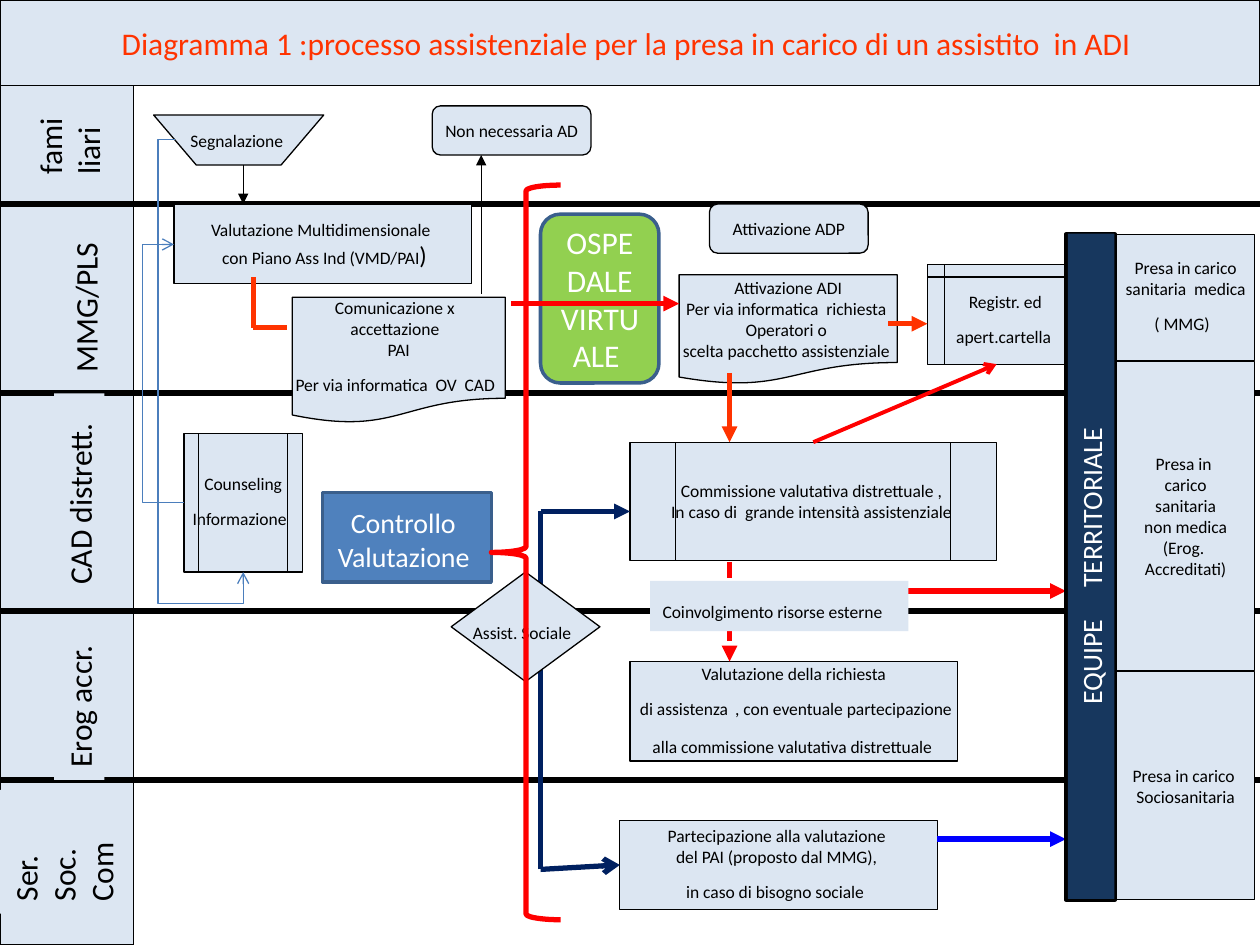
from pptx import Presentation
from pptx.dml.color import RGBColor
from pptx.enum.dml import MSO_LINE
from pptx.enum.shapes import MSO_CONNECTOR, MSO_SHAPE as SHAPE
from pptx.enum.text import MSO_ANCHOR, MSO_AUTO_SIZE, PP_ALIGN
from pptx.oxml.ns import qn
from pptx.util import Pt
from lxml.etree import SubElement

HUES = {
    "black": "000000", "white": "FFFFFF", "pale": "DCE6F2", "green": "92D050",
    "blue": "4F81BD", "edge": "3A5F8C", "thin": "4B7EBC", "navy": "002060",
    "dark": "17375E", "red": "FF0000", "flame": "FF3300", "vivid": "0000FF",
}
GAP = (" ", 18)  # tall space that opens up a line


class Chart:
    """Holds the style and the current slide."""
    font = "Calibri"

    def __init__(self, slide):
        self.slide = slide
        self.shapes = slide.shapes

    def hue(self, name):
        return RGBColor.from_string(HUES[name])

    def paint(self, item, fill="pale", edge="black", width=0.75):
        item.shadow.inherit = False
        if fill:
            item.fill.solid()
            item.fill.fore_color.rgb = self.hue(fill)
        else:
            item.fill.background()
        if edge:
            item.line.color.rgb = self.hue(edge)
            item.line.width = Pt(width)
        else:
            item.line.fill.background()

    def label(self, item, lines, size=10, color="black", wrap=False,
              align=PP_ALIGN.CENTER, grow=False):
        """Each line is a string or a list of strings and (string, size) pairs."""
        frame = item.text_frame
        frame.word_wrap = wrap
        frame.vertical_anchor = MSO_ANCHOR.TOP if grow else MSO_ANCHOR.MIDDLE
        if grow:
            frame.auto_size = MSO_AUTO_SIZE.SHAPE_TO_FIT_TEXT
        for i, line in enumerate(lines):
            para = frame.paragraphs[0] if i == 0 else frame.add_paragraph()
            para.alignment = align
            for part in [line] if isinstance(line, str) else line:
                words, pts = (part, size) if isinstance(part, str) else part
                run = para.add_run()
                run.text = words
                run.font.name = self.font
                run.font.size = Pt(pts)
                run.font.color.rgb = self.hue(color)

    def box(self, x, y, w, h, lines=(), kind=SHAPE.RECTANGLE, fill="pale",
            edge="black", width=0.75, turn=0, **text):
        item = self.shapes.add_shape(kind, Pt(x), Pt(y), Pt(w), Pt(h))
        item.rotation = turn
        self.paint(item, fill, edge, width)
        self.label(item, lines, **text)
        return item

    def poly(self, points, lines):
        pen = self.shapes.build_freeform(*[Pt(n) for n in points[0]], scale=1.0)
        pen.add_line_segments([(Pt(x), Pt(y)) for x, y in points[1:]], close=True)
        item = pen.convert_to_shape()
        self.paint(item)
        self.label(item, lines)
        return item

    def line(self, x1, y1, x2, y2, color="black", width=3, head=None,
             dash=None, kind=MSO_CONNECTOR.STRAIGHT):
        item = self.shapes.add_connector(kind, Pt(x1), Pt(y1), Pt(x2), Pt(y2))
        item.line.color.rgb = self.hue(color)
        item.line.width = Pt(width)
        if dash:
            item.line.dash_style = dash
        props = item._element.spPr
        if head:
            SubElement(props.find(qn("a:ln")), qn("a:tailEnd"), type=head)
        SubElement(props, qn("a:effectLst"))
        return item

    def bend(self, x1, y1, x2, y2, preset, *adjust):
        item = self.line(x1, y1, x2, y2, "thin", 0.75, "arrow",
                         kind=MSO_CONNECTOR.ELBOW)
        geom = item._element.spPr.find(qn("a:prstGeom"))
        geom.set("prst", preset)
        guides = geom.find(qn("a:avLst"))
        if guides is None:
            guides = SubElement(geom, qn("a:avLst"))
        for i, value in enumerate(adjust, 1):
            SubElement(guides, qn("a:gd"), name=f"adj{i}", fmla=f"val {value}")
        return item


def main():
    deck = Presentation()
    deck.slide_width, deck.slide_height = Pt(720), Pt(540)
    c = Chart(deck.slides.add_slide(deck.slide_layouts[6]))

    # Lanes and title
    c.box(308.9, 122.4, 67.7, 96.5, ["OSPEDALE VIRTUALE "], SHAPE.ROUNDED_RECTANGLE,
          "green", "edge", 2, size=18, color="white", wrap=True)
    c.line(0, 349.2, 720, 349.2)
    c.box(0, 0, 76.3, 540)
    c.box(0, 0, 720, 49, ["Diagramma 1 :processo assistenziale per la presa in "
                          "carico di un assistito  in ADI "], size=18, color="flame")
    for y in (116.6, 224.6, 445.7):
        c.line(0, y, 720, y)
    lanes = [
        ("familiari", 15.8, 58.3, 46.8, 50.4, True),
        ("MMG/PLS", 0, 157, 97.2, 28.8, False),
        ("CAD distrett.", -13, 268.6, 116.6, 28.8, False),
        ("Erog accr.", -2.9, 383, 96.5, 28.8, False),
        ("Ser. Soc. Com", 0.7, 450.7, 70.6, 72, True),
    ]
    for name, x, y, w, h, wrap in lanes:
        c.box(x, y, w, h, [name], edge=None, turn=270, size=18, wrap=wrap,
              align=PP_ALIGN.LEFT, grow=True)

    # Request and first steps
    c.box(99.4, 116.6, 169.9, 45.4, ["Valutazione Multidimensionale ",
          [" con Piano Ass Ind (VMD/PAI", (")", 14)]])
    c.poly([(87.8, 65.7), (112.2, 94.3), (160.6, 94.3), (185, 65.7)],
           ["Segnalazione "])
    for x, y, name in [(247, 60.5, "Non necessaria AD"), (405.4, 116.6, "Attivazione ADP")]:
        c.box(x, y, 90.7, 28.1, [name], SHAPE.ROUNDED_RECTANGLE)
    c.box(388.1, 157, 124.6, 62.6, ["Attivazione ADI", "Per via informatica  richiesta ",
          "Operatori o ", "scelta pacchetto assistenziale "], SHAPE.FLOWCHART_DOCUMENT)
    c.box(105.1, 247.7, 67.7, 79.2, ["Counseling", ["Informazione", GAP]],
          SHAPE.FLOWCHART_PREDEFINED_PROCESS)
    record = c.box(529.9, 151.2, 79.2, 56.9, ["Registr. ed", [" apert.cartella", GAP]],
                   SHAPE.FLOWCHART_INTERNAL_STORAGE)
    board = c.box(360, 252.7, 209.5, 67.7, ["Commissione valutativa distrettuale , ",
                  "In caso di  grande intensità assistenziale "],
                  SHAPE.FLOWCHART_PREDEFINED_PROCESS)
    c.line(144.7, 158.4, 144.7, 187.2, "flame")
    c.line(144.7, 187.2, 164.2, 187.2, "flame")
    c.box(360, 378, 187.2, 56.9, ["Valutazione della richiesta",
          [" di assistenza", GAP, ", con eventuale partecipazione"],
          [" alla commissione valutativa distrettuale", GAP]])

    # Care taken on by the team
    c.box(637.9, 133.9, 79.2, 72, ["Presa in carico", " sanitaria  medica ",
                                   ["( MMG)", GAP]])
    c.line(416.9, 321.1, 416.9, 378, "red", head="triangle", dash=MSO_LINE.SQUARE_DOT)
    c.line(518.4, 337.7, 609.1, 337.7, "red", head="triangle")
    c.box(637.9, 206.6, 79.2, 176.4, ["Presa in ", "carico", " sanitaria ",
                                      "non medica", "(Erog. ", "Accreditati)"])
    c.box(637.9, 383.8, 79.2, 130.3, ["Presa in carico ", "Sociosanitaria"])
    social = c.box(354.2, 468.7, 181.4, 51.1, ["Partecipazione alla valutazione ",
                   "del PAI (proposto dal MMG), ", ["in caso di bisogno sociale", GAP]])

    # Flow arrows
    c.line(308.9, 496.8, 308.9, 292.3, "navy")
    c.line(308.9, 292.3, 360, 292.3, "navy", head="triangle")
    c.line(535.7, 479.5, 609.1, 479.5, "vivid", head="triangle")
    c.line(292.3, 173.5, 388.1, 173.5, "red", head="triangle")
    c.line(275, 167.8, 275, 88.6, width=0.75, head="triangle")
    c.line(139, 94.3, 139, 116.6, width=0.75, head="triangle")

    # Team bar
    c.box(609.1, 133.9, 28.1, 380.2, width=2.25)
    c.box(433.4, 310.3, 380.2, 26.6, ["EQUIPE     TERRITORIALE"], fill="dark", edge=None,
          turn=270, size=16, color="white", wrap=True, grow=True)

    # Notice, social worker and outside resources
    c.line(507.6, 185, 529.9, 185, "flame", head="triangle")
    c.box(167, 169.9, 121.7, 72, ["Comunicazione x  ", "accettazione  ", "PAI",
          ["Per via informatica  OV  CAD", GAP]], SHAPE.FLOWCHART_DOCUMENT)
    c.line(0, 349.2, 82.1, 349.2)
    c.box(257.8, 326.9, 85, 62.6, [["Assist. Sociale", GAP]], SHAPE.FLOWCHART_DECISION)
    c.box(371.5, 331.9, 147.6, 28.8, [["Coinvolgimento risorse esterne", GAP]],
          edge=None, wrap=True, align=PP_ALIGN.LEFT, grow=True)
    c.line(416.9, 213.1, 416.9, 252.7, "flame", head="triangle")
    link = c.line(464.8, 252.7, 569.5, 208.1, "red", 2.25, "arrow")
    link.begin_connect(board, 0)
    link.end_connect(record, 2)
    link = c.line(308.9, 496.8, 354.2, 494.3, "navy", head="arrow")
    link.end_connect(social, 1)
    c.bend(100.1, 79.9, 139, 326.9, "bentConnector4", -25100, 107300)
    c.bend(105.1, 287.3, 99.4, 139.7, "bentConnector3", 415300)

    # Control and its brace
    c.box(184.3, 281.5, 96.5, 51.1, [["Controllo", GAP], "Valutazione "], fill="blue",
          edge="edge", width=2, size=16, color="white", wrap=True)
    c.box(280.8, 105.8, 39.6, 419.8, kind=SHAPE.LEFT_BRACE, fill=None, edge="red", width=3)

    deck.save("out.pptx")


if __name__ == "__main__":
    main()
